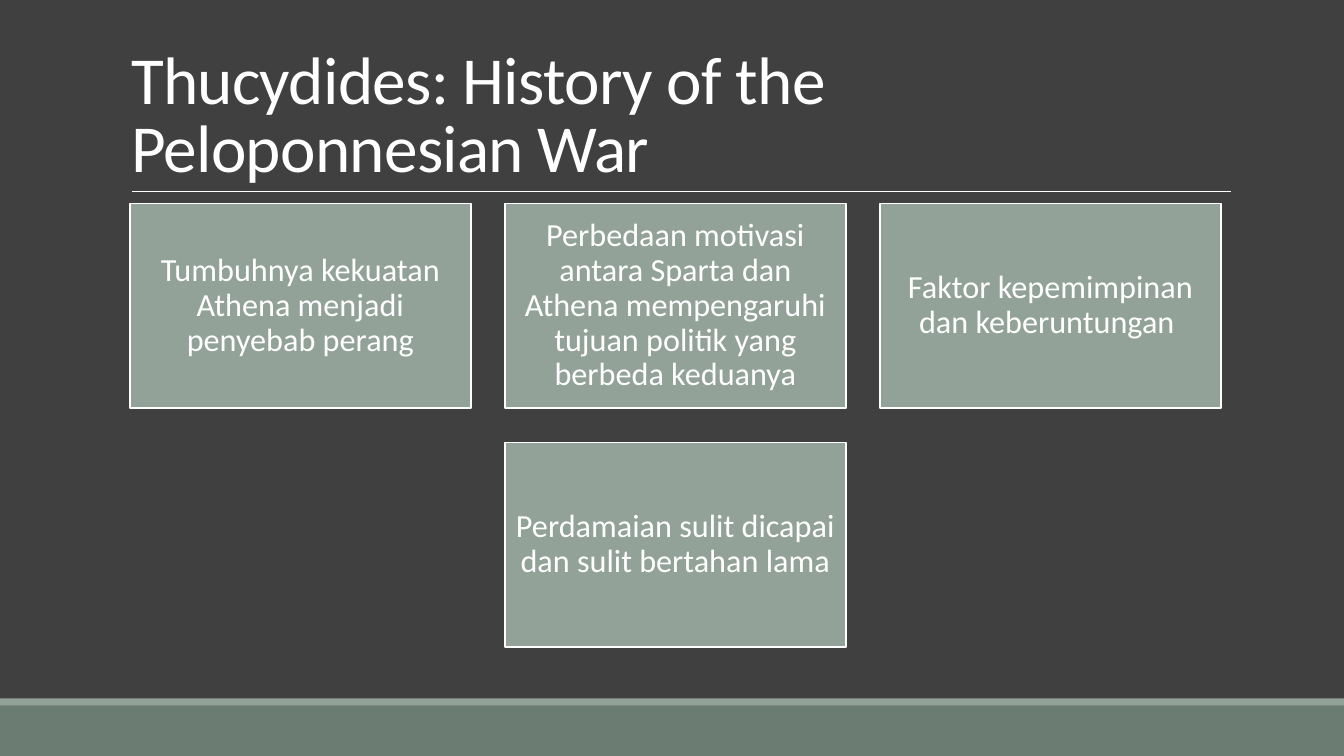
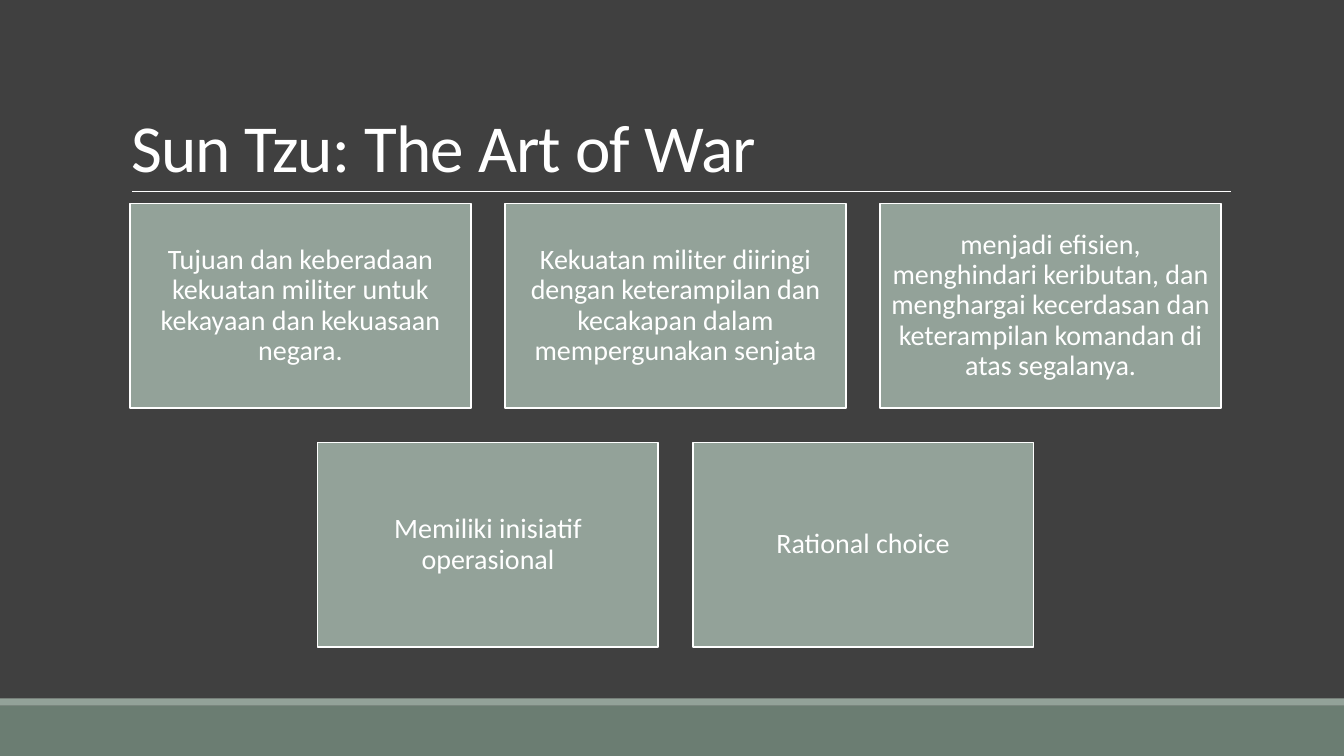
import dataclasses

import pptx
import pptx.dml.color
import pptx.enum.shapes
import pptx.enum.text
import pptx.oxml
import pptx.util

Inches = pptx.util.Inches
Pt = pptx.util.Pt
ANCHOR = pptx.enum.text.MSO_ANCHOR
ALIGN = pptx.enum.text.PP_ALIGN
RECT = pptx.enum.shapes.MSO_SHAPE.RECTANGLE
STRAIGHT = pptx.enum.shapes.MSO_CONNECTOR.STRAIGHT


@dataclasses.dataclass(frozen=True)
class Theme:
    background: str = "404040"
    band: str = "6B7D72"
    accent: str = "93A299"
    light: str = "FFFFFF"
    font: str = "Calibri"
    title_size: float = 48
    title_tracking: float = -0.5
    rule_width: float = 0.5
    card_border: float = 1.25


THEME = Theme()

# Card grid, in inches
SLIDE_W, SLIDE_H = 13.33, 7.5
COLUMNS = 3
CARD_W, CARD_H, GAP = 3.38, 2.03, 0.34
GRID_LEFT, GRID_TOP = 1.29, 2.02


def rgb(value):
    return pptx.dml.color.RGBColor.from_string(value)


def write(tf, text, size, align=ALIGN.LEFT, anchor=ANCHOR.MIDDLE,
          line_spacing=0.9, inset=None, tracking=0):
    """Fill a text frame with one formatted paragraph."""
    tf.word_wrap = True
    tf.auto_size = pptx.enum.text.MSO_AUTO_SIZE.NONE
    tf.vertical_anchor = anchor
    if inset is not None:
        tf.margin_left = tf.margin_right = Inches(inset)
        tf.margin_top = tf.margin_bottom = Inches(inset)
    p = tf.paragraphs[0]
    p.alignment = align
    p.line_spacing = line_spacing
    r = p.add_run()
    r.text = text
    r.font.name = THEME.font
    r.font.size = Pt(size)
    r.font.color.rgb = rgb(THEME.light)
    if tracking:
        r._r.get_or_add_rPr().set("spc", str(round(tracking * 100)))


class Deck:
    def __init__(self, theme):
        self.theme = theme
        self.prs = pptx.Presentation()
        self.prs.slide_width = Inches(SLIDE_W)
        self.prs.slide_height = Inches(SLIDE_H)
        fill = self.prs.slide_master.background.fill
        fill.solid()
        fill.fore_color.rgb = rgb(theme.background)
        self.s = None

    def slide(self, title):
        """Start a slide with its footer bands, title and rule."""
        self.s = self.prs.slides.add_slide(self.prs.slide_layouts[5])
        self.box(0, 7, SLIDE_W, 0.5, self.theme.band)
        self.box(0, 6.93, SLIDE_W, 0.07, self.theme.accent)
        self.rule(1.31, 12.21, 1.9)
        self.title(title)

    def title(self, text):
        sp = self.s.shapes.title
        sp.left, sp.top = Inches(1.2), Inches(0.31)
        sp.width, sp.height = Inches(11), Inches(1.59)
        write(sp.text_frame, text, self.theme.title_size, anchor=ANCHOR.BOTTOM,
              line_spacing=0.85, tracking=self.theme.title_tracking)

    def rule(self, left, right, y):
        line = self.s.shapes.add_connector(
            STRAIGHT, Inches(left), Inches(y), Inches(right), Inches(y))
        line.line.color.rgb = rgb(self.theme.light)
        line.line.width = Pt(self.theme.rule_width)
        line._element.spPr.append(pptx.oxml.parse_xml(
            '<a:effectLst xmlns:a='
            '"http://schemas.openxmlformats.org/drawingml/2006/main"/>'))

    def box(self, left, top, width, height, fill, border=None):
        sp = self.s.shapes.add_shape(
            RECT, Inches(left), Inches(top), Inches(width), Inches(height))
        sp.shadow.inherit = False
        sp.fill.solid()
        sp.fill.fore_color.rgb = rgb(fill)
        if border:
            sp.line.color.rgb = rgb(self.theme.light)
            sp.line.width = Pt(border)
        else:
            sp.line.fill.background()
        return sp

    def cards(self, texts, size, inset):
        """Lay cards out in rows, centring a row that is not full."""
        for i, text in enumerate(texts):
            row, col = divmod(i, COLUMNS)
            in_row = min(COLUMNS, len(texts) - row * COLUMNS)
            col += (COLUMNS - in_row) / 2
            sp = self.box(GRID_LEFT + col * (CARD_W + GAP),
                          GRID_TOP + row * (CARD_H + GAP),
                          CARD_W, CARD_H, self.theme.accent,
                          self.theme.card_border)
            write(sp.text_frame, text, size, align=ALIGN.CENTER, inset=inset)


def main():
    deck = Deck(THEME)

    # Thucydides
    deck.slide("Thucydides: History of the Peloponnesian War")
    deck.cards([
        "Tumbuhnya kekuatan Athena menjadi penyebab perang",
        "Perbedaan motivasi antara Sparta dan Athena mempengaruhi "
        "tujuan politik yang berbeda keduanya",
        "Faktor kepemimpinan dan keberuntungan ",
        "Perdamaian sulit dicapai dan sulit bertahan lama",
    ], size=23, inset=0.1)

    # Sun Tzu
    deck.slide("Sun Tzu: The Art of War")
    deck.cards([
        "Tujuan dan keberadaan kekuatan militer untuk kekayaan "
        "dan kekuasaan negara.",
        "Kekuatan militer diiringi dengan keterampilan dan kecakapan "
        "dalam mempergunakan senjata",
        "menjadi efisien, menghindari keributan, dan menghargai kecerdasan "
        "dan keterampilan komandan di atas segalanya.",
        "Memiliki inisiatif operasional",
        "Rational choice",
    ], size=20, inset=0.08)

    deck.prs.save("out.pptx")


if __name__ == "__main__":
    main()
